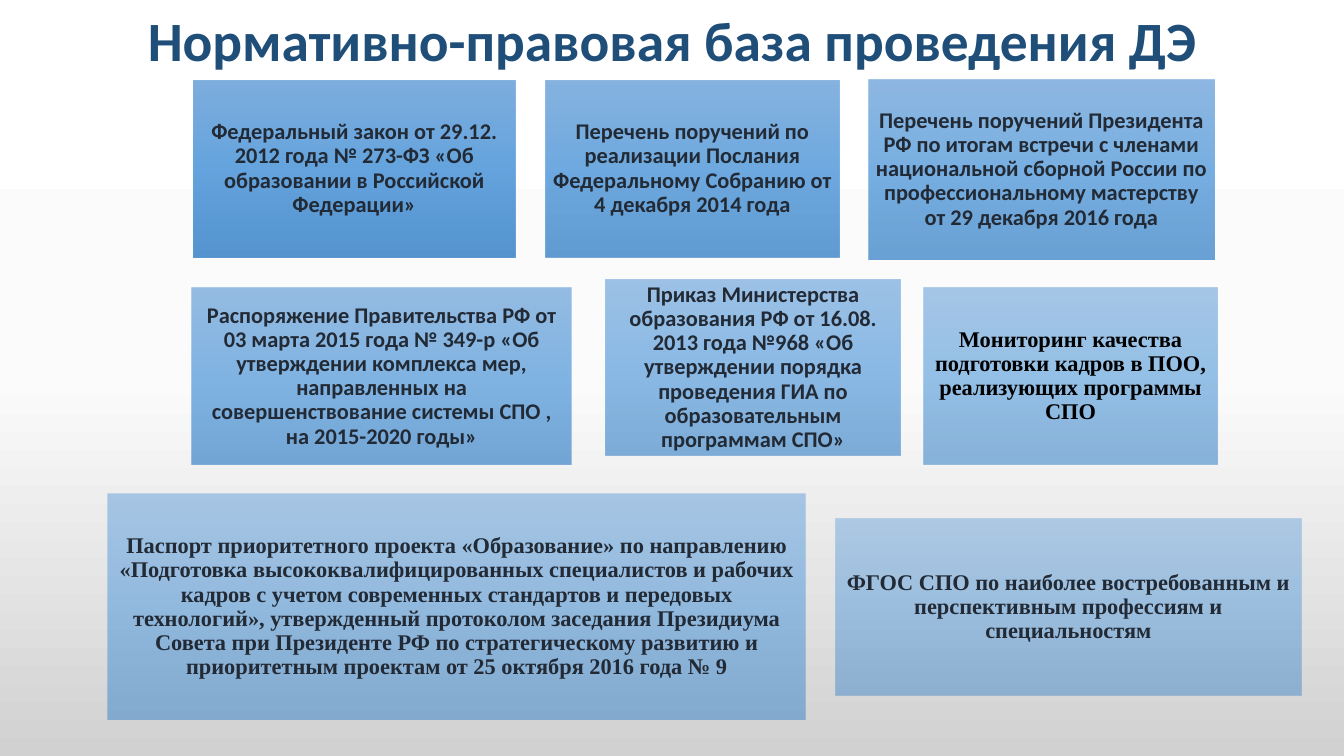
from lxml.etree import SubElement
from pptx import Presentation
from pptx.dml.color import RGBColor
from pptx.enum.shapes import MSO_SHAPE
from pptx.enum.text import MSO_ANCHOR, MSO_AUTO_SIZE, PP_ALIGN
from pptx.oxml.ns import qn
from pptx.util import Cm, Pt

# Theme: colours, fonts and type sizes
THEME = {
    "page": ["FFFFFF", "FBFBFB", "D1D1D1"],
    "box": ["71A6DB", "559BDB", "448ACA"],
    "head": "1F4E79",
    "dark": "222A35",
    "black": "000000",
    "sans": "Calibri",
    "serif": "Times New Roman",
    "big": 39.6,
    "small": 16,
}


def write(frame, text, *, font, size, color, inset=None):
    frame.word_wrap = True
    frame.auto_size = MSO_AUTO_SIZE.NONE
    frame.vertical_anchor = MSO_ANCHOR.MIDDLE
    if inset is not None:
        frame.margin_left = frame.margin_right = inset
        frame.margin_top = frame.margin_bottom = inset
    frame.text = text
    para = frame.paragraphs[0]
    para.alignment = PP_ALIGN.CENTER
    para.line_spacing = 0.9
    run = para.runs[0].font
    run.name = font
    run.size = Pt(size)
    run.bold = True
    run.color.rgb = RGBColor.from_string(color)


def grade(fill, node, colors, alpha=100):
    """Fill from top to bottom with evenly spaced colours."""
    fill.gradient()
    fill.gradient_angle = 270
    stops = next(node.iter(qn("a:gsLst")))
    for old in list(stops):
        stops.remove(old)
    for i, color in enumerate(colors):
        place = round(100000 * i / (len(colors) - 1))
        stop = SubElement(stops, qn("a:gs"), pos=str(place))
        tint = SubElement(stop, qn("a:srgbClr"), val=color)
        if alpha < 100:
            SubElement(tint, qn("a:alpha"), val=str(round(alpha * 1000)))


# Slide and background
deck = Presentation()
deck.slide_width, deck.slide_height = Cm(33.87), Cm(19.05)
slide = deck.slides.add_slide(deck.slide_layouts[5])
grade(slide.background.fill, slide.element, THEME["page"])

# Boxes: left, top, width, height in cm, then font, colour, text
BOXES = [
    (4.88, 2.03, 8.1, 4.45, "sans", "dark",
     "Федеральный закон от 29.12. 2012 года № 273-ФЗ «Об образовании "
     "в Российской Федерации»"),
    (13.74, 2.03, 7.42, 4.45, "sans", "dark",
     "Перечень поручений по реализации Послания Федеральному Собранию "
     "от 4 декабря 2014 года"),
    (21.89, 2.01, 8.71, 4.52, "sans", "dark",
     "Перечень поручений Президента РФ по итогам встречи с членами "
     "национальной сборной России по профессиональному мастерству "
     "от 29 декабря 2016 года"),
    (4.83, 7.26, 9.58, 4.45, "sans", "dark",
     "Распоряжение Правительства РФ от 03 марта 2015 года № 349-р "
     "«Об утверждении комплекса мер, направленных на совершенствование "
     "системы СПО , на 2015-2020 годы»"),
    (15.27, 7.04, 7.42, 4.45, "sans", "dark",
     "Приказ Министерства образования РФ от 16.08. 2013 года №968 "
     "«Об утверждении порядка проведения ГИА по образовательным "
     "программам СПО»"),
    (23.27, 7.26, 7.42, 4.45, "serif", "black",
     "Мониторинг качества подготовки кадров в ПОО, реализующих "
     "программы СПО"),
    (2.72, 12.45, 17.58, 5.69, "serif", "dark",
     "Паспорт приоритетного проекта «Образование» по направлению "
     "«Подготовка высококвалифицированных специалистов и рабочих кадров "
     "с учетом современных стандартов и передовых технологий», "
     "утвержденный протоколом заседания Президиума Совета при Президенте "
     "РФ по стратегическому развитию и приоритетным проектам "
     "от 25 октября 2016 года № 9"),
    (21.06, 13.08, 11.73, 4.45, "serif", "dark",
     "ФГОС СПО по наиболее востребованным и перспективным профессиям "
     "и специальностям"),
]

# Opacity falls evenly from 90 to 50 percent
step = 40 / (len(BOXES) - 1)
for i, (left, top, width, height, font, color, text) in enumerate(BOXES):
    box = slide.shapes.add_shape(
        MSO_SHAPE.RECTANGLE, Cm(left), Cm(top), Cm(width), Cm(height))
    box.shadow.inherit = False
    box.line.fill.background()
    grade(box.fill, box.element, THEME["box"], 90 - i * step)
    write(box.text_frame, text, font=THEME[font], size=THEME["small"],
          color=THEME[color], inset=Cm(0.18))

# Title
title = slide.shapes.title
title.left, title.top = Cm(2.34), Cm(0.51)
title.width, title.height = Cm(29.21), Cm(1.17)
write(title.text_frame, "Нормативно-правовая база проведения ДЭ",
      font=THEME["sans"], size=THEME["big"], color=THEME["head"])

deck.save("out.pptx")
